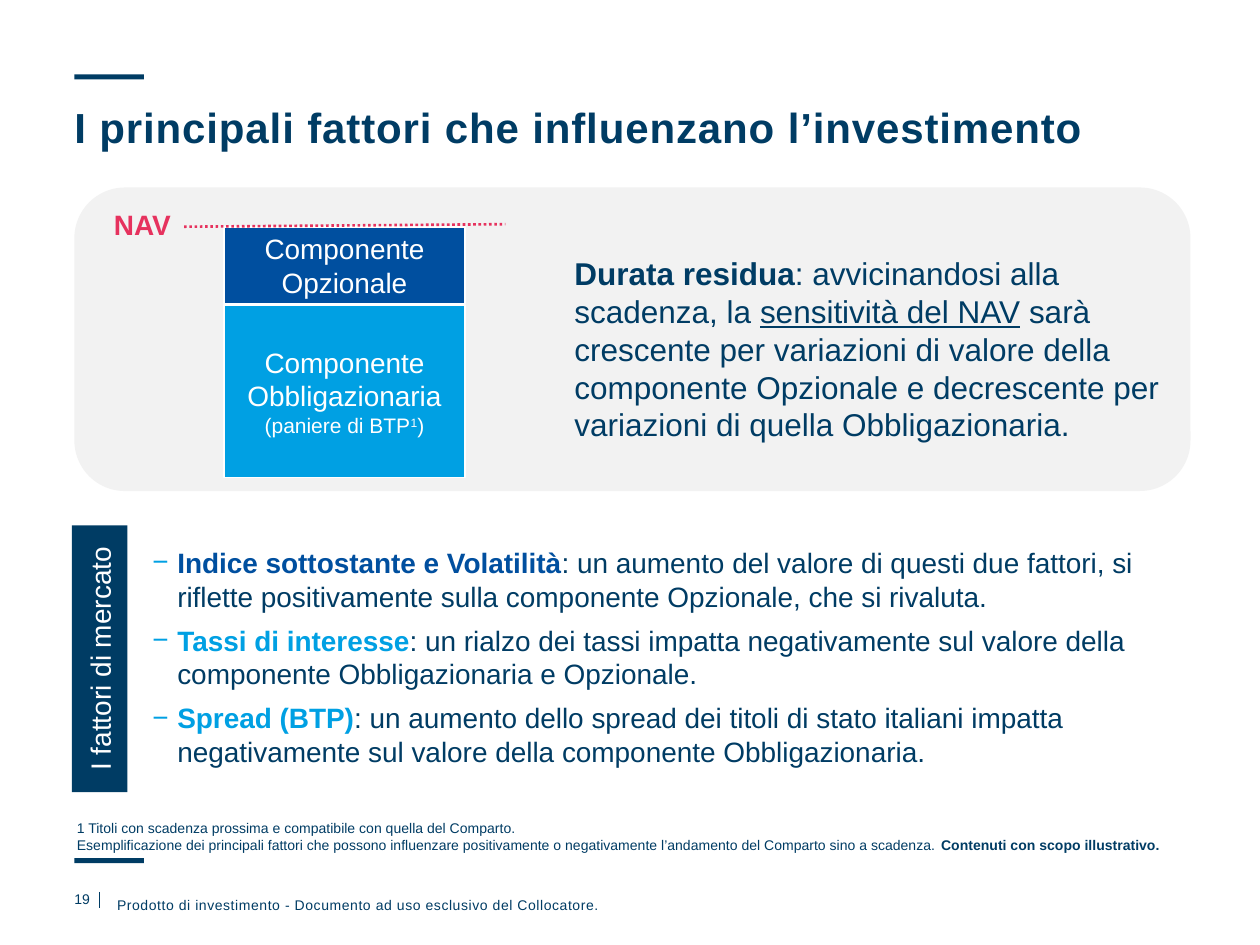
import dataclasses

import pptx
import pptx.dml.color
import pptx.enum.dml
import pptx.enum.shapes
import pptx.enum.text
import pptx.oxml
import pptx.oxml.ns
import pptx.util
from pptx.util import Cm

ALIGN = pptx.enum.text.PP_ALIGN
ANCHOR = pptx.enum.text.MSO_ANCHOR
SHAPE = pptx.enum.shapes.MSO_SHAPE


@dataclasses.dataclass(frozen=True)
class Theme:
    font: str = "Arial"
    navy: str = "003C64"
    blue: str = "004F9F"
    sky: str = "00A0E3"
    red: str = "E6325E"
    grey: str = "F2F2F2"
    white: str = "FFFFFF"
    title: int = 24
    lead: int = 18
    body: int = 16
    detail: int = 12
    small: int = 8


@dataclasses.dataclass(frozen=True)
class Box:
    left: float
    top: float
    width: float
    height: float

    def inside(self, left, top, width, height):
        return Box(self.left + left, self.top + top, width, height)

    def lengths(self):
        return Cm(self.left), Cm(self.top), Cm(self.width), Cm(self.height)


THEME = Theme()


def rgb(color):
    return pptx.dml.color.RGBColor.from_string(color)


def add_run(paragraph, text, size, color, bold=False, underline=False, spacing=0, raised=False):
    run = paragraph.add_run()
    run.text = text
    font = run.font
    font.name = THEME.font
    font.size = pptx.util.Pt(size)
    font.bold = bold
    font.color.rgb = rgb(color)
    if underline:
        font.underline = True
    properties = run._r.get_or_add_rPr()
    if spacing:
        properties.set("spc", str(round(spacing * 100)))
    if raised:
        properties.set("baseline", "30000")


def add_bullet(paragraph, color):
    properties = paragraph._p.get_or_add_pPr()
    indent = Cm(0.5)
    properties.set("marL", str(indent))
    properties.set("indent", str(-indent))
    namespace = pptx.oxml.ns.nsdecls("a")
    for xml in (
        f'<a:buClr {namespace}><a:srgbClr val="{color}"/></a:buClr>',
        f'<a:buFont {namespace} typeface="{THEME.font}"/>',
        f'<a:buChar {namespace} char="−"/>',
    ):
        properties.append(pptx.oxml.parse_xml(xml))


def write(shape, paragraphs, size=THEME.body, color=THEME.navy, align=ALIGN.LEFT, anchor=ANCHOR.TOP,
          insets=None, bullet=None, after=0, line_spacing=None, **run_format):
    frame = shape.text_frame
    frame.word_wrap = True
    frame.auto_size = pptx.enum.text.MSO_AUTO_SIZE.NONE
    frame.vertical_anchor = anchor
    if insets is not None:
        frame.margin_left, frame.margin_top, frame.margin_right, frame.margin_bottom = map(Cm, insets)
    for index, runs in enumerate(paragraphs):
        paragraph = frame.add_paragraph() if index else frame.paragraphs[0]
        paragraph.alignment = align
        paragraph.space_before = pptx.util.Pt(0)
        paragraph.space_after = pptx.util.Pt(after)
        if line_spacing:
            paragraph.line_spacing = line_spacing
        if bullet:
            add_bullet(paragraph, bullet)
        for text, changes in runs:
            add_run(paragraph, text, **{"size": size, "color": color, **run_format, **changes})


def add_text(slide, box, paragraphs, **text_format):
    write(slide.shapes.add_textbox(*box.lengths()), paragraphs, **text_format)


def add_block(slide, box, fill, line=None, kind=SHAPE.RECTANGLE):
    shape = slide.shapes.add_shape(kind, *box.lengths())
    shape.shadow.inherit = False
    shape.fill.solid()
    shape.fill.fore_color.rgb = rgb(fill)
    if line:
        shape.line.color.rgb = rgb(line)
        shape.line.width = pptx.util.Pt(1)
    else:
        shape.line.fill.background()
    return shape


def add_line(slide, start, end, color, width, dash=None):
    line = slide.shapes.add_connector(pptx.enum.shapes.MSO_CONNECTOR.STRAIGHT, *map(Cm, start + end))
    line.line.color.rgb = rgb(color)
    line.line.width = pptx.util.Pt(width)
    if dash:
        line.line.dash_style = dash
    line._element.spPr.append(pptx.oxml.parse_xml(f'<a:effectLst {pptx.oxml.ns.nsdecls("a")}/>'))


def move(shape, box):
    shape.left, shape.top, shape.width, shape.height = box.lengths()


def add_header(slide, box):
    add_block(slide, box.inside(0, 0, 1.4, 0.1), THEME.navy)
    title = slide.shapes.title
    move(title, box.inside(0, 0.66, box.width, 1.07))
    write(title, [[("I principali fattori che influenzano l’investimento", {})]],
          size=THEME.title, bold=True, spacing=0.5, line_spacing=0.9, insets=(0, 0, 0, 0))


def add_nav_panel(slide, box):
    add_block(slide, box, THEME.grey, kind=SHAPE.ROUNDED_RECTANGLE)
    detail = {"size": THEME.detail}
    components = [
        (2.37, 3.48, THEME.sky, [
            [("Componente Obbligazionaria", {})],
            [("(paniere di BTP", detail), ("1", {**detail, "raised": True}), (")", detail)],
        ]),
        (0.79, 1.55, THEME.blue, [[("Componente Opzionale", {})]]),
    ]
    for top, height, fill, paragraphs in components:
        block = add_block(slide, box.inside(3.02, top, 4.85, height), fill, THEME.white)
        write(block, paragraphs, color=THEME.white, align=ALIGN.CENTER, anchor=ANCHOR.MIDDLE)
    add_line(slide, (box.left + 2.21, box.top + 0.79), (box.left + 8.69, box.top + 0.74),
             THEME.red, 1.5, pptx.enum.dml.MSO_LINE.ROUND_DOT)
    add_text(slide, box.inside(0.48, 0.28, 1.78, 0.94), [[("NAV", {})]],
             color=THEME.red, bold=True, align=ALIGN.CENTER)
    add_text(slide, box.inside(9.83, 1.22, 12.7, 4.11), [[
        ("Durata residua", {"bold": True}),
        (": avvicinandosi alla scadenza, la ", {}),
        ("sensitività del NAV", {"underline": True}),
        (" sarà crescente per variazioni di valore della componente Opzionale e decrescente "
         "per variazioni di quella Obbligazionaria.", {}),
    ]], size=THEME.lead)


def add_market_factors(slide, box):
    factors = [
        ("Indice sottostante e Volatilità", THEME.blue,
         ": un aumento del valore di questi due fattori, si riflette positivamente sulla "
         "componente Opzionale, che si rivaluta."),
        ("Tassi di interesse", THEME.sky,
         ": un rialzo dei tassi impatta negativamente sul valore della componente "
         "Obbligazionaria e Opzionale."),
        ("Spread (BTP)", THEME.sky,
         ": un aumento dello spread dei titoli di stato italiani impatta negativamente sul "
         "valore della componente Obbligazionaria."),
    ]
    body = slide.placeholders[1]
    move(body, box.inside(1.37, 0.28, box.width - 1.37, 4.78))
    write(body, [[(name, {"color": color, "bold": True}), (effect, {})] for name, color, effect in factors],
          bullet=THEME.sky, after=6)
    thickness = 1.12
    offset = (box.height - thickness) / 2
    label = add_block(slide, box.inside(-offset, offset, box.height, thickness), THEME.navy)
    label.rotation = 270
    write(label, [[("I fattori di mercato", {})]],
          color=THEME.white, align=ALIGN.CENTER, anchor=ANCHOR.MIDDLE)


def add_notes(slide, box):
    add_text(slide, box, [
        [("1 Titoli con scadenza prossima e compatibile con quella del Comparto.", {})],
        [("Esemplificazione dei principali fattori che possono influenzare positivamente o "
          "negativamente l’andamento del Comparto sino a scadenza. ", {}),
         ("Contenuti con scopo illustrativo.", {"bold": True})],
    ], size=THEME.small, anchor=ANCHOR.MIDDLE, insets=(0, 0.13, 0.25, 0.13))


def add_footer(slide, box):
    add_block(slide, box.inside(0, 0, 1.4, 0.1), THEME.navy)
    add_line(slide, (box.left + 0.51, box.top + 0.68), (box.left + 0.51, box.top + 1.01), THEME.navy, 0.5)
    small = {"size": THEME.small, "insets": (0, 0, 0, 0)}
    add_text(slide, box.inside(0, 0.66, 0.51, 0.51), [[("19", {})]], **small)
    add_text(slide, box.inside(0.86, 0.78, 16.76, 0.61),
             [[("Prodotto di investimento - Documento ad uso esclusivo del Collocatore.", {})]],
             spacing=0.3, **small)


def main():
    presentation = pptx.Presentation()
    presentation.slide_width, presentation.slide_height = Cm(25.4), Cm(19.05)
    slide = presentation.slides.add_slide(presentation.slide_layouts[1])
    add_header(slide, Box(1.5, 1.5, 22.4, 1.73))
    add_nav_panel(slide, Box(1.5, 3.78, 22.5, 6.12))
    add_market_factors(slide, Box(1.45, 10.59, 22.5, 5.38))
    add_notes(slide, Box(1.55, 16.43, 22.4, 0.86))
    add_footer(slide, Box(1.5, 17.3, 22.4, 1.4))
    presentation.save("out.pptx")


if __name__ == "__main__":
    main()
